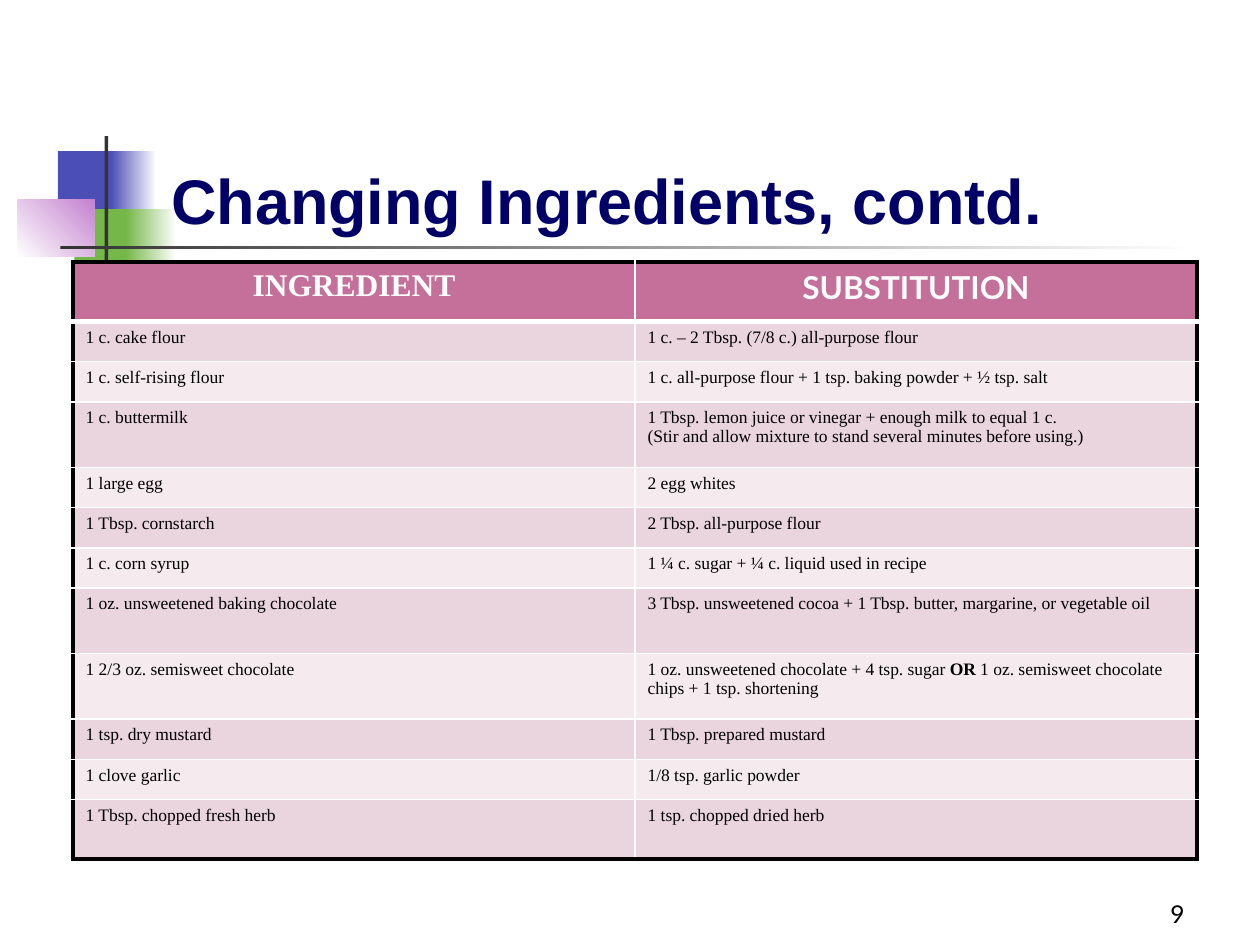
from lxml import etree
from pptx import Presentation
from pptx.dml.color import RGBColor
from pptx.enum import shapes, text
from pptx.oxml import ns
from pptx.util import Inches, Pt

NAVY = RGBColor(0x00, 0x00, 0x66)
BLUE = RGBColor(0x4B, 0x4E, 0xB5)
GREEN = RGBColor(0x76, 0xB7, 0x49)
LILAC = RGBColor(0xC4, 0x81, 0xCF)
GREY = RGBColor(0x33, 0x33, 0x33)
ROSE = RGBColor(0xC4, 0x70, 0x9A)
PINK = RGBColor(0xEA, 0xD5, 0xDE)
PALE = RGBColor(0xF5, 0xEB, 0xEF)
WHITE = RGBColor(0xFF, 0xFF, 0xFF)
BLACK = RGBColor(0x00, 0x00, 0x00)

TITLE = "Changing Ingredients, contd."
PAGE_NUMBER = "9"
HEADER = ("INGREDIENT", "SUBSTITUTION")
HEADER_FONTS = ("Times New Roman", "Lato")
SHORT, TALL, EDGE = 0.32, 0.52, 0.47  # row heights

# Ingredient, substitution (** marks bold), row height
SWAPS = [
    ("1 c. cake flour", "1 c. – 2 Tbsp. (7/8 c.) all-purpose flour", SHORT),
    ("1 c. self-rising flour", "1 c. all-purpose flour + 1 tsp. baking powder + ½ tsp. salt", SHORT),
    ("1 c. buttermilk", "1 Tbsp. lemon juice or vinegar + enough milk to equal 1 c.\n"
     "(Stir and allow mixture to stand several minutes before using.)", TALL),
    ("1 large egg", "2 egg whites", SHORT),
    ("1 Tbsp. cornstarch", "2 Tbsp. all-purpose flour", SHORT),
    ("1 c. corn syrup", "1 ¼ c. sugar + ¼ c. liquid used in recipe", SHORT),
    ("1 oz. unsweetened baking chocolate",
     "3 Tbsp. unsweetened cocoa + 1 Tbsp. butter, margarine, or vegetable oil", TALL),
    ("1 2/3 oz. semisweet chocolate", "1 oz. unsweetened chocolate + 4 tsp. sugar **OR** "
     "1 oz. semisweet chocolate chips + 1 tsp. shortening", TALL),
    ("1 tsp. dry mustard", "1 Tbsp. prepared mustard", SHORT),
    ("1 clove garlic", "1/8 tsp. garlic powder", SHORT),
    ("1 Tbsp. chopped fresh herb", "1 tsp. chopped dried herb", EDGE),
]

# Left, top, width, height, start colour, end colour, gradient angle
ORNAMENTS = [
    (0.46, 1.2, 0.48, 0.52, BLUE, BLUE, 0),
    (0.88, 1.2, 0.36, 0.52, BLUE, WHITE, 0),
    (0.59, 1.66, 0.46, 0.52, GREEN, GREEN, 0),
    (1, 1.66, 0.4, 0.52, GREEN, WHITE, 0),
    (0.14, 1.58, 0.61, 0.46, WHITE, LILAC, 45),
    (0.83, 1.08, 0.03, 1.15, GREY, GREY, 0),
    (0.48, 1.95, 9, 0.03, GREY, WHITE, 0),
]


def add_ornament(page, left, top, width, height, start, end, angle):
    box = page.shapes.add_shape(shapes.MSO_SHAPE.RECTANGLE, *map(Inches, (left, top, width, height)))
    box.shadow.inherit = False
    box.line.fill.background()
    if start == end:
        box.fill.solid()
        box.fill.fore_color.rgb = start
        return
    box.fill.gradient()
    box.fill.gradient_angle = angle
    for stop, colour, position in zip(box.fill.gradient_stops, (start, end), (0, 1)):
        stop.color.rgb = colour
        stop.position = position


def write(frame, content, font, size, colour, bold=False, align=text.PP_ALIGN.LEFT):
    for number, line in enumerate(content.split("\n")):
        para = frame.add_paragraph() if number else frame.paragraphs[0]
        para.alignment = align
        para.font.name, para.font.size = font, Pt(size)
        para.font.color.rgb = colour
        para.font.bold = bold
        for index, piece in enumerate(line.split("**")):
            span = para.add_run()
            span.text = piece
            if index % 2:
                span.font.bold = True


def add_text(page, place, content, *style, **options):
    frame = page.shapes.add_textbox(*map(Inches, place)).text_frame
    frame.word_wrap = True
    frame.vertical_anchor = text.MSO_ANCHOR.BOTTOM
    write(frame, content, *style, **options)


def set_borders(cell, **sides):
    properties = cell._tc.get_or_add_tcPr()
    for side in "LRTB":
        colour, width = sides[side]
        line = etree.SubElement(properties, ns.qn(f"a:ln{side}"), w=str(Pt(width)))
        fill = etree.SubElement(line, ns.qn("a:solidFill"))
        etree.SubElement(fill, ns.qn("a:srgbClr"), val=str(colour))


def add_swap_table(page):
    heights = [EDGE] + [swap[2] for swap in SWAPS]
    last = len(SWAPS)
    place = (0.58, 2.08, 8.92, sum(heights))
    table = page.shapes.add_table(last + 1, 2, *map(Inches, place)).table
    for column in table.columns:
        column.width = Inches(place[2] / 2)
    frame_line, inner, rule = (BLACK, 3), (WHITE, 1), (WHITE, 3)
    for row, height in enumerate(heights):
        table.rows[row].height = Inches(height)
        for column in range(2):
            cell = table.cell(row, column)
            set_borders(
                cell,
                L=inner if column else frame_line,
                R=frame_line if column else inner,
                T={0: frame_line, 1: rule}.get(row, inner),
                B={0: rule, last: frame_line}.get(row, inner),
            )
            cell.fill.solid()
            if row == 0:
                cell.fill.fore_color.rgb = ROSE
                write(cell.text_frame, HEADER[column], HEADER_FONTS[column], 18, WHITE,
                      bold=True, align=text.PP_ALIGN.CENTER)
            else:
                cell.fill.fore_color.rgb = PINK if row % 2 else PALE
                write(cell.text_frame, SWAPS[row - 1][column], "Times New Roman", 10, BLACK)


def main():
    deck = Presentation()
    deck.slide_width, deck.slide_height = Inches(10), Inches(7.5)
    page = deck.slides.add_slide(deck.slide_layouts[6])

    # Corner squares and rules
    for ornament in ORNAMENTS:
        add_ornament(page, *ornament)

    # Title, page number and table
    add_text(page, (1.26, 0.68, 8.52, 1.25), TITLE, "Arial", 36, NAVY, bold=True)
    add_text(page, (7.42, 6.92, 2.08, 0.5), PAGE_NUMBER, "Lato", 14, BLACK,
             align=text.PP_ALIGN.RIGHT)
    add_swap_table(page)
    deck.save("out.pptx")


if __name__ == "__main__":
    main()
